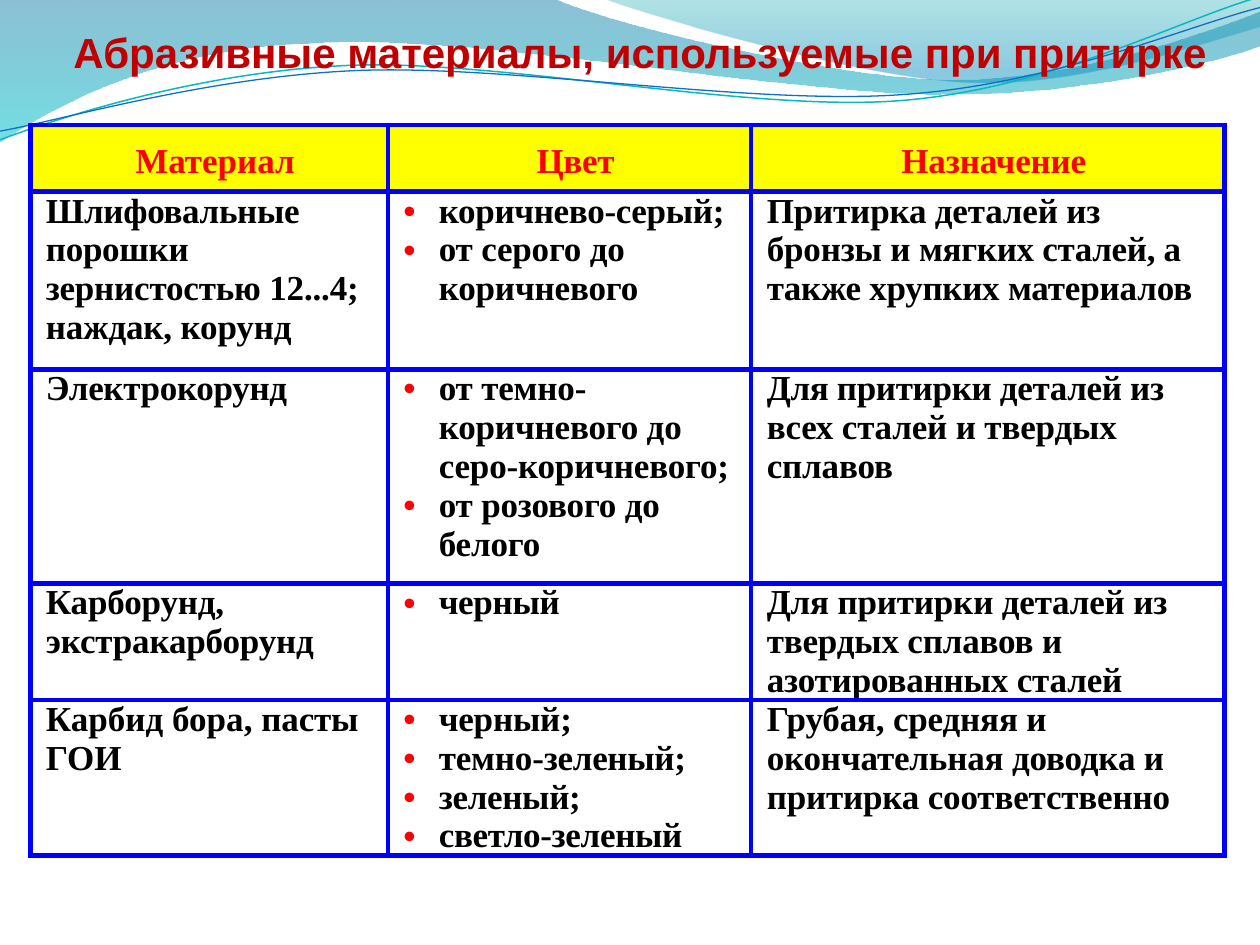
"""Build a slide with a table of abrasive lapping materials under a wave header."""
from dataclasses import dataclass

from lxml import etree
from pptx import Presentation
from pptx import util as u
from pptx.dml import color
from pptx.enum import text
from pptx.oxml import ns

BORDER, RED, BLACK, WHITE, YELLOW = "0000FF", "FF0000", "000000", "FFFFFF", "FFFF00"


@dataclass(frozen=True)
class Stop:
    position: float
    colour: str
    opacity: int


@dataclass(frozen=True)
class Wave:
    start: tuple
    pieces: tuple
    stops: tuple = ()
    line: str = ""
    width: float = 0


@dataclass(frozen=True)
class Span:
    words: str
    spacing: float = -0.1


@dataclass(frozen=True)
class Style:
    colour: str = BLACK
    fill: str = WHITE
    anchor: text.MSO_ANCHOR = text.MSO_ANCHOR.TOP
    align: text.PP_ALIGN = text.PP_ALIGN.LEFT
    line_spacing: float = 1.0
    margin: float = 6.8
    indent: float = 0
    bullet: str = ""


HEADER = Style(RED, YELLOW, text.MSO_ANCHOR.MIDDLE, text.PP_ALIGN.CENTER, 1.15)
PLAIN = Style()
LISTED = Style(margin=26.8, indent=-20.2, bullet="•")

WAVES = (
    Wave((0, 0), (
        ((316.8, -0.7),),
        ((342.7, 12.2), (478.1, 45.4), (545.8, 45.4)),
        ((614.2, 45.4), (689.8, 18.7), (720, 6.5)),
        ((720.7, 25.9),),
        ((707.8, 31.7), (626.4, 54.7), (537.1, 54)),
        ((447.8, 54), (275, 20.2), (185, 24.5)),
        ((92.9, 25.9), (33.1, 59.8), (-0.7, 81.4)),
        ((0, 0),),
    ), (Stop(0, "0074A1", 45), Stop(1, "00C6CF", 55))),
    Wave((344.9, -0.7), (
        ((366.5, 7.9), (491, 44.6), (553.7, 46.8)),
        ((616.3, 49.7), (691.9, 23), (720, 15.1)),
        ((720, 0),),
        ((344.9, -0.7),),
    ), (Stop(0, "00A1A9", 30), Stop(0.8, "008BBF", 45))),
    Wave((0, 79.9), (
        ((34.6, 67), (113.8, 41), (199.4, 37.4)),
        ((284.4, 33.8), (427, 64.1), (513.4, 57.6)),
        ((599.8, 51.1), (675.4, 10.8), (718.6, -1.4)),
    ), line="0AB8BF", width=0.85),
    Wave((0, 74.9), (
        ((33.8, 69.1), (118.1, 43.9), (203.8, 40.3)),
        ((290.2, 36.7), (429.8, 60.5), (516.2, 54)),
        ((601.9, 48.2), (677.5, 15.1), (720, 4.3)),
    ), line="0F6FC6", width=0.75),
)

COLUMNS = (204.5, 207.4, 270.7)
ROWS = (38.2, 101.5, 122.4, 63.4, 82.8)
CELLS = (
    ([[Span("Материал", 0)]], [[Span("Цвет", -0.2)]], [[Span("Назначение")]]),
    (
        [[Span("Шлифовальные порошки зерни", -0.2), Span("стостью 12...4; наждак, корунд")]],
        [[Span("коричнево-серый;", -0.2)], [Span("от серого до коричневого")]],
        [[Span("Притирка деталей из бронзы и "),
          Span("мягких сталей, а также хрупких ", -0.2), Span("материалов")]],
    ),
    (
        [[Span("Электрокорунд", -0.2)]],
        [[Span("от темно-коричневого до серо-коричневого;")], [Span("от розового до белого")]],
        [[Span("Для притирки деталей из всех ", -0.2), Span("сталей и твердых сплавов")]],
    ),
    (
        [[Span("Карборунд, экстракарборунд")]],
        [[Span("черный", -0.2)]],
        [[Span("Для притирки деталей из твердых сплавов и азотированных сталей")]],
    ),
    (
        [[Span("Карбид бора, ", 0), Span("пасты ГОИ")]],
        [[Span("черный;")], [Span("темно-"), Span("зеленый;", -0.2)],
         [Span("зеленый;", -0.2)], [Span("светло-зеленый", -0.2)]],
        [[Span("Грубая, средняя и окончательная доводка и притирка соответственно")]],
    ),
)


def rgb(value: str) -> color.RGBColor:
    return color.RGBColor.from_string(value)


def add_child(parent, tag: str, **attributes):
    return etree.SubElement(parent, ns.qn(tag), attributes)


def bend(shape, pieces: tuple) -> None:
    nodes = iter(list(shape.element.iter(ns.qn("a:lnTo"))))
    for piece in pieces:
        first, *others = [next(nodes) for _ in piece]
        if others:
            first.tag = ns.qn("a:cubicBezTo")
        for node in others:
            first.append(node[0])
            node.getparent().remove(node)


def draw_wave(slide, wave: Wave) -> None:
    builder = slide.shapes.build_freeform(*(u.Pt(value) for value in wave.start))
    points = [(u.Pt(x), u.Pt(y)) for piece in wave.pieces for x, y in piece]
    builder.add_line_segments(points, close=bool(wave.stops))
    shape = builder.convert_to_shape()
    bend(shape, wave.pieces)
    shape.shadow.inherit = False
    if not wave.stops:
        shape.fill.background()
        shape.line.color.rgb = rgb(wave.line)
        shape.line.width = u.Pt(wave.width)
        return
    shape.line.fill.background()
    shape.fill.gradient()
    shape.fill.gradient_angle = 270
    for target, stop in zip(shape.fill.gradient_stops, wave.stops):
        target.position = stop.position
        target.color.rgb = rgb(stop.colour)
    for node, stop in zip(shape.element.spPr.iter(ns.qn("a:srgbClr")), wave.stops):
        add_child(node, "a:alpha", val=str(stop.opacity * 1000))


def set_font(run, name: str, size: float, colour: str) -> None:
    run.font.name = name
    run.font.size = u.Pt(size)
    run.font.bold = True
    run.font.color.rgb = rgb(colour)


def set_indent(para, margin: float, indent: float):
    properties = para._p.get_or_add_pPr()
    properties.set("marL", str(u.Pt(margin)))
    properties.set("indent", str(u.Pt(indent)))
    return properties


def write_paragraph(para, spans: list, style: Style) -> None:
    para.alignment = style.align
    para.line_spacing = style.line_spacing
    properties = set_indent(para, style.margin, style.indent)
    if style.bullet:
        add_child(add_child(properties, "a:buClr"), "a:srgbClr", val=RED)
        add_child(properties, "a:buFont", typeface="Arial")
        add_child(properties, "a:buChar", char=style.bullet)
    for span in spans:
        run = para.add_run()
        run.text = span.words
        set_font(run, "Times New Roman", 20, style.colour)
        run.font._element.set("spc", str(round(span.spacing * 100)))


def fill_cell(cell, paragraphs: list, style: Style) -> None:
    cell.margin_left = cell.margin_right = u.Pt(2.2)
    cell.margin_top = cell.margin_bottom = u.Pt(0)
    cell.vertical_anchor = style.anchor
    properties = cell._tc.get_or_add_tcPr()
    for side in ("a:lnL", "a:lnR", "a:lnT", "a:lnB"):
        edge = add_child(properties, side, w=str(u.Pt(3)))
        add_child(add_child(edge, "a:solidFill"), "a:srgbClr", val=BORDER)
    cell.fill.solid()
    cell.fill.fore_color.rgb = rgb(style.fill)
    frame = cell.text_frame
    for index, spans in enumerate(paragraphs):
        para = frame.add_paragraph() if index else frame.paragraphs[0]
        write_paragraph(para, spans, style)


def draw_table(slide) -> None:
    table = slide.shapes.add_table(len(ROWS), len(COLUMNS), u.Pt(17.3), u.Pt(71.4),
                                   u.Pt(sum(COLUMNS)), u.Pt(sum(ROWS))).table
    table.first_row = table.horz_banding = False
    for column, width in zip(table.columns, COLUMNS):
        column.width = u.Pt(width)
    for number, (row, height) in enumerate(zip(table.rows, ROWS)):
        row.height = u.Pt(height)
        styles = (PLAIN, LISTED, PLAIN) if number else (HEADER,) * 3
        for cell, paragraphs, style in zip(row.cells, CELLS[number], styles):
            fill_cell(cell, paragraphs, style)


def draw_title(slide) -> None:
    box = slide.shapes.add_textbox(u.Pt(17.3), u.Pt(11.5), u.Pt(682.6), u.Pt(36))
    frame = box.text_frame
    frame.text = "Абразивные материалы, используемые при притирке"
    frame.word_wrap = True
    frame.auto_size = text.MSO_AUTO_SIZE.SHAPE_TO_FIT_TEXT
    frame.vertical_anchor = text.MSO_ANCHOR.MIDDLE
    para = frame.paragraphs[0]
    para.alignment = text.PP_ALIGN.CENTER
    set_indent(para, 0, 14.4)
    set_font(para.runs[0], "Arial", 24, "C00000")


def main() -> None:
    deck = Presentation()
    deck.slide_width, deck.slide_height = u.Pt(720), u.Pt(540)
    slide = deck.slides.add_slide(deck.slide_layouts[6])
    for wave in WAVES:
        draw_wave(slide, wave)
    draw_table(slide)
    draw_title(slide)
    deck.save("out.pptx")


if __name__ == "__main__":
    main()
